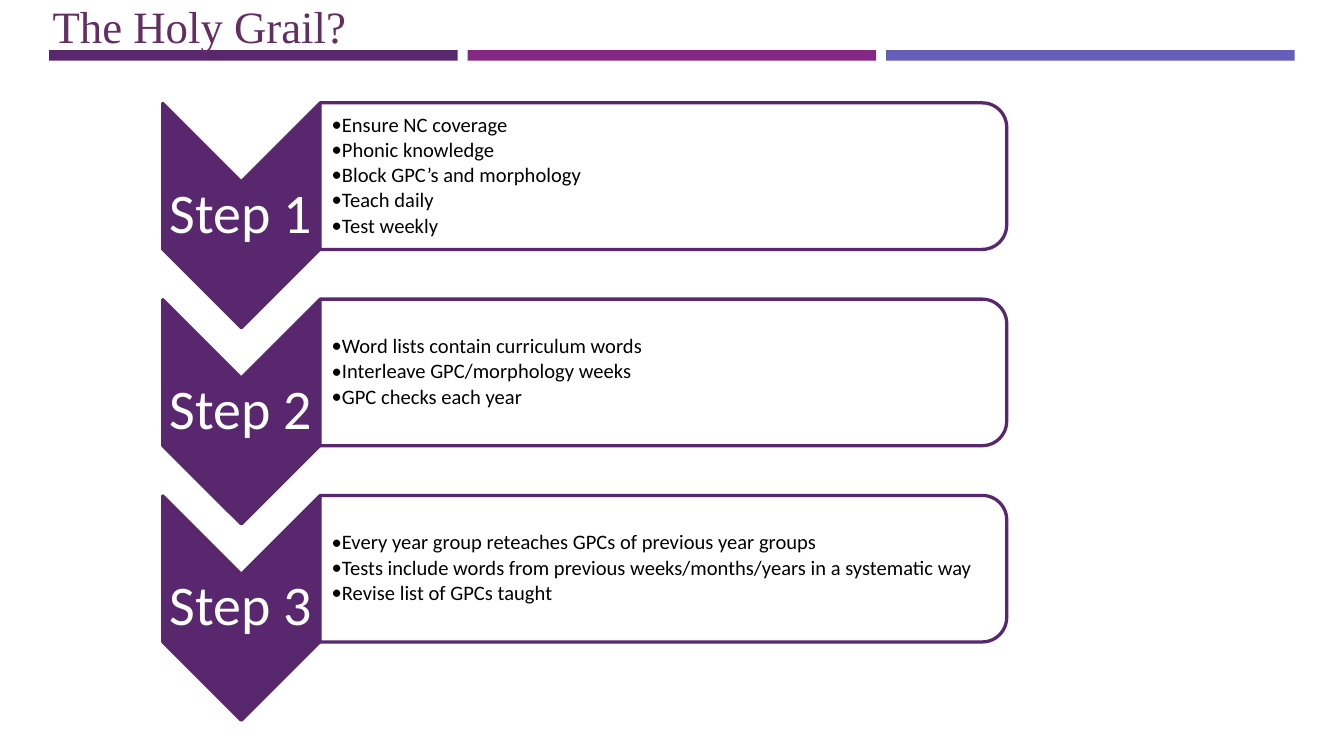
from dataclasses import dataclass

from lxml.etree import SubElement
from pptx import Presentation
from pptx.dml.color import RGBColor
from pptx.enum.shapes import MSO_SHAPE as Preset
from pptx.enum.text import MSO_ANCHOR as Anchor, MSO_AUTO_SIZE as AutoSize, PP_ALIGN as Align
from pptx.oxml.ns import qn
from pptx.util import Cm, Pt

PURPLE = "59276E"
BAR_COLOURS = [PURPLE, "832983", "665EB8"]
BODY_FONT = "Calibri"
STEP_PITCH = 3.71


@dataclass
class Box:
    left: float
    top: float
    width: float
    height: float

    def lengths(self) -> list:
        return [Cm(v) for v in (self.left, self.top, self.width, self.height)]

    def down(self, distance: float) -> "Box":
        return Box(self.left, self.top + distance, self.width, self.height)


@dataclass
class Step:
    label: str
    points: list[str]


# Places of the parts of the first step, before rotation
CHEVRON = Box(2.44, 2.59, 4.24, 2.97)
LABEL = Box(3.07, 3.43, 2.97, 1.27)
PANEL = Box(11.15, -3.16, 2.77, 12.98)
POINTS = Box(6.05, 2.08, 12.85, 2.49)

STEPS = [
    Step("Step 1", ["Ensure NC coverage", "Phonic knowledge", "Block GPC’s and morphology",
                    "Teach daily", "Test weekly"]),
    Step("Step 2", ["Word lists contain curriculum words", "Interleave GPC/morphology weeks",
                    "GPC checks each year"]),
    Step("Step 3", ["Every year group reteaches GPCs of previous year groups",
                    "Tests include words from previous weeks/months/years in a systematic way",
                    "Revise list of GPCs taught"]),
]


def colour(value: str) -> RGBColor:
    return RGBColor.from_string(value)


def set_all(target, values: dict) -> None:
    for name, value in values.items():
        setattr(target, name, value)


def add_span(para, text: str, font: str, size: float, ink: str) -> None:
    span = para.add_run()
    span.text = text
    set_all(span.font, {"name": font, "size": Pt(size)})
    span.font.color.rgb = colour(ink)


def add_block(page, preset, box: Box, fill: str, line: str | None = None, rotation: float = 0):
    shape = page.shapes.add_shape(preset, *box.lengths())
    shape.shadow.inherit = False
    shape.rotation = rotation
    shape.fill.solid()
    shape.fill.fore_color.rgb = colour(fill)
    if line:
        shape.line.color.rgb = colour(line)
        shape.line.width = Pt(1.75)
    else:
        shape.line.fill.background()
    return shape


def add_text(page, box: Box, margins: tuple, lines: list[str], size: float, ink: str,
             para_format: dict) -> list:
    frame = page.shapes.add_textbox(*box.lengths()).text_frame
    sides = ("margin_left", "margin_top", "margin_right", "margin_bottom")
    set_all(frame, {"word_wrap": True, "vertical_anchor": Anchor.MIDDLE,
                    **{side: Cm(m) for side, m in zip(sides, margins)}})
    paras = [frame.paragraphs[0]] + [frame.add_paragraph() for _ in lines[1:]]
    for para, line in zip(paras, lines):
        set_all(para, {"line_spacing": 0.9, **para_format})
        add_span(para, line, BODY_FONT, size, ink)
    return paras


def add_bullet(para) -> None:
    props = para._p.get_or_add_pPr()
    props.set("marL", str(Cm(0.15)))
    props.set("indent", str(-Cm(0.15)))
    SubElement(props, qn("a:buFont"), typeface=BODY_FONT)
    SubElement(props, qn("a:buChar"), char="•")


def draw_step(page, step: Step, offset: float) -> None:
    add_block(page, Preset.CHEVRON, CHEVRON.down(offset), PURPLE, PURPLE, 90)
    add_text(page, LABEL.down(offset), (0.05,) * 4, [step.label], 30, "FFFFFF",
             {"alignment": Align.CENTER})
    panel = add_block(page, Preset.ROUND_2_SAME_RECTANGLE, PANEL.down(offset),
                      "FFFFFF", PURPLE, 90)
    fill = panel._element.spPr.find(qn("a:solidFill"))
    SubElement(fill[0], qn("a:alpha"), val="90000")
    paras = add_text(page, POINTS.down(offset), (0.22, 0.03, 0.03, 0.03), step.points, 11,
                     "000000", {"alignment": Align.LEFT, "space_after": Pt(1.65), "level": 1})
    for para in paras:
        add_bullet(para)


def draw_title(page, text: str) -> None:
    title = page.shapes.title
    left, top, width, height = Box(0.74, -0.16, 20.6, 1.27).lengths()
    set_all(title, {"left": left, "top": top, "width": width, "height": height})
    frame = title.text_frame
    set_all(frame, {"word_wrap": True, "vertical_anchor": Anchor.TOP,
                    "auto_size": AutoSize.NONE})
    para = frame.paragraphs[0]
    para.alignment = Align.LEFT
    add_span(para, text, "Times New Roman", 24, "632E62")
    # Bring the title in front of the bars
    page.shapes._spTree.append(title._element)


def main() -> None:
    deck = Presentation()
    set_all(deck, {"slide_width": Cm(25.4), "slide_height": Cm(14.29)})
    page = deck.slides.add_slide(deck.slide_layouts.get_by_name("Title Only"))

    # Bars and title
    for index, fill in enumerate(BAR_COLOURS):
        add_block(page, Preset.RECTANGLE, Box(0.93 + 7.91 * index, 0.95, 7.72, 0.2), fill)
    draw_title(page, "The Holy Grail?")

    # Steps
    for index, step in enumerate(STEPS):
        draw_step(page, step, index * STEP_PITCH)

    deck.save("out.pptx")


if __name__ == "__main__":
    main()
